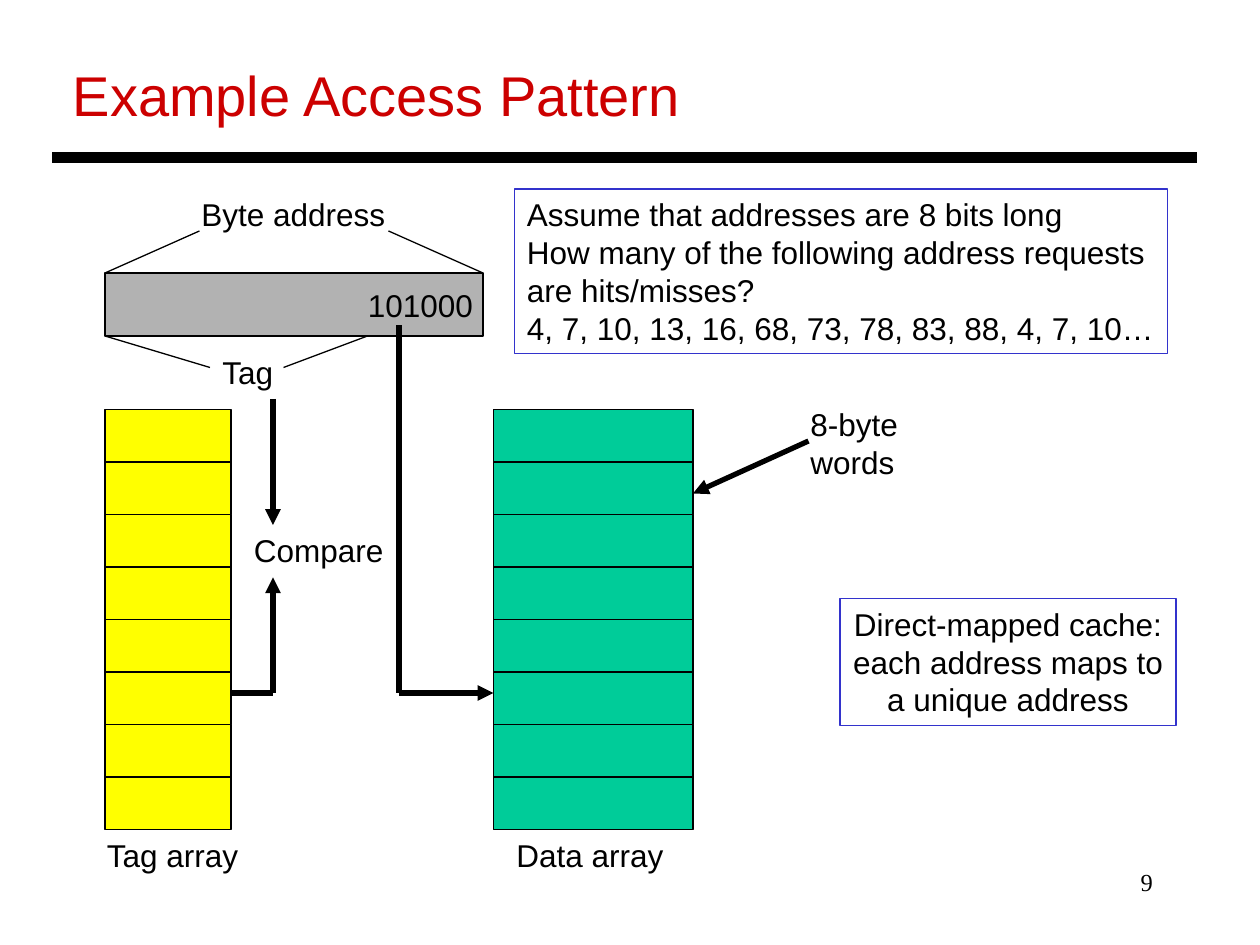
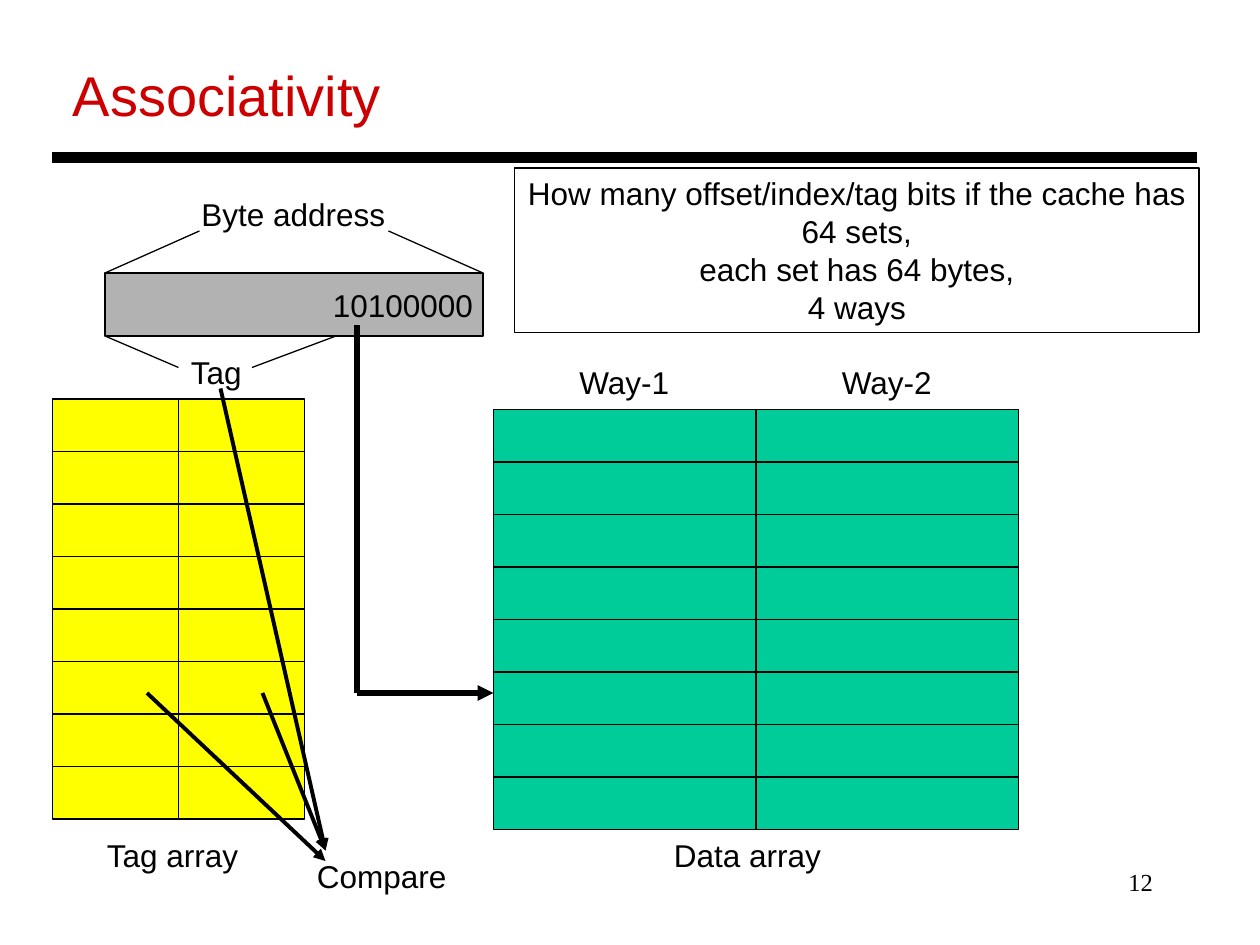
from dataclasses import dataclass
from typing import Optional

from lxml.etree import SubElement
from pptx import Presentation
from pptx.dml.color import RGBColor
from pptx.enum.shapes import MSO_CONNECTOR as Connector, MSO_SHAPE as Preset
from pptx.enum.text import MSO_ANCHOR as Anchor, MSO_AUTO_SIZE as AutoSize, PP_ALIGN as Align
from pptx.oxml.ns import qn
from pptx.slide import Slide
from pptx.util import Inches, Pt

COLUMNS, ROWS = 120, 90
SLIDE_WIDTH, SLIDE_HEIGHT = Inches(10), Inches(7.5)


@dataclass(frozen=True)
class Theme:
    ink: str = "000000"
    title: str = "CC0000"
    data: str = "00CC99"
    tag: str = "FFFF00"
    address: str = "B2B2B2"
    note: str = "3333CC"
    font: str = "Arial"
    number_font: str = "Times New Roman"
    title_size: float = 32
    body_size: float = 18
    number_size: float = 14
    thin: float = 0.75
    medium: float = 2.25
    thick: float = 3
    rule: float = 6


THEME = Theme()


@dataclass(frozen=True)
class Area:
    column: float
    row: float
    columns: float
    rows: float


@dataclass(frozen=True)
class Text:
    area: Area
    lines: tuple[str, ...]
    align: Align = Align.LEFT
    size: float = THEME.body_size
    color: str = THEME.ink
    font: str = THEME.font
    wrap: bool = False
    border: Optional[str] = None


@dataclass(frozen=True)
class Line:
    start: tuple[float, float]
    end: tuple[float, float]
    width: float = THEME.thick
    arrow: bool = False


@dataclass(frozen=True)
class CellArray:
    column: float
    row: float
    cell_columns: float
    fill: str
    ways: int = 1
    sets: int = 8
    cell_rows: float = 5


@dataclass(frozen=True)
class Address:
    bits: str
    tag_column: float
    tag_end: float
    index_column: float


def x(columns: float) -> int:
    return round(SLIDE_WIDTH * columns / COLUMNS)


def y(rows: float) -> int:
    return round(SLIDE_HEIGHT * rows / ROWS)


def place(area: Area) -> tuple[int, int, int, int]:
    return x(area.column), y(area.row), x(area.columns), y(area.rows)


def label(column: float, row: float, columns: float, words: str) -> Text:
    return Text(Area(column, row, columns, 4.8), (words,))


def write(frame, text: Text) -> None:
    frame.word_wrap = text.wrap
    for number, words in enumerate(text.lines):
        paragraph = frame.paragraphs[0] if number == 0 else frame.add_paragraph()
        paragraph.alignment = text.align
        run = paragraph.add_run()
        run.text = words
        run.font.name = text.font
        run.font.size = Pt(text.size)
        run.font.color.rgb = RGBColor.from_string(text.color)


def draw_text(slide: Slide, text: Text) -> None:
    box = slide.shapes.add_textbox(*place(text.area))
    if text.border:
        box.line.color.rgb = RGBColor.from_string(text.border)
        box.line.width = Pt(THEME.thin)
    write(box.text_frame, text)
    box.text_frame.auto_size = AutoSize.NONE if text.wrap else AutoSize.SHAPE_TO_FIT_TEXT


def draw_rectangle(slide: Slide, area: Area, fill: str):
    shape = slide.shapes.add_shape(Preset.RECTANGLE, *place(area))
    shape.shadow.inherit = False
    shape.fill.solid()
    shape.fill.fore_color.rgb = RGBColor.from_string(fill)
    shape.line.color.rgb = RGBColor.from_string(THEME.ink)
    shape.line.width = Pt(THEME.thin)
    return shape


def draw_line(slide: Slide, line: Line) -> None:
    (start_column, start_row), (end_column, end_row) = line.start, line.end
    connector = slide.shapes.add_connector(
        Connector.STRAIGHT, x(start_column), y(start_row), x(end_column), y(end_row))
    connector.line.color.rgb = RGBColor.from_string(THEME.ink)
    connector.line.width = Pt(line.width)
    if line.arrow:
        SubElement(connector.line._get_or_add_ln(), qn("a:tailEnd"), type="triangle")
    SubElement(connector._element.spPr, qn("a:effectLst"))


def draw_array(slide: Slide, array: CellArray) -> None:
    for way in range(array.ways):
        for entry in range(array.sets):
            draw_rectangle(slide, Area(array.column + way * array.cell_columns,
                                       array.row + entry * array.cell_rows,
                                       array.cell_columns, array.cell_rows), array.fill)


def draw_address(slide: Slide, address: Address) -> None:
    bar = Area(10, 26, 36, 6)
    right, bottom = bar.column + bar.columns, bar.row + bar.rows
    frame = draw_rectangle(slide, bar, THEME.address).text_frame
    frame.vertical_anchor = Anchor.MIDDLE
    frame.margin_right = Inches(0.08)
    write(frame, Text(bar, (address.bits,), Align.RIGHT, wrap=True))
    draw_text(slide, label(18, 18, 20, "Byte address"))
    draw_text(slide, label(address.tag_column, 33, 7.5, "Tag"))
    index = address.index_column
    for line in (
        Line((19, 22), (bar.column, bar.row), THEME.thin),
        Line((37, 22), (right, bar.row), THEME.thin),
        Line((bar.column, bottom), (address.tag_column, 35), THEME.thin),
        Line((address.tag_column + 7, 35), (address.tag_end, bottom), THEME.thin),
        Line((index, 31), (index, 66)),
        Line((index, 66), (47, 66), arrow=True),
    ):
        draw_line(slide, line)


@dataclass(frozen=True)
class Page:
    title: str
    title_columns: float
    number: str
    arrays: tuple[CellArray, ...]
    address: Address
    texts: tuple[Text, ...]
    lines: tuple[Line, ...]


PAGES = (
    Page(
        "Example Access Pattern", 60.5, "9",
        (CellArray(47, 39, 19, THEME.data), CellArray(10, 39, 12, THEME.tag)),
        Address("101000", 20, 35, 38),
        (
            label(76, 38, 19.5, "8-byte words"),
            label(23, 50, 14.75, "Compare"),
            label(48, 79, 16.5, "Data array"),
            Text(Area(80, 57, 32, 12.1),
                 ("Direct-mapped cache:", "each address maps to", "a unique address"),
                 Align.CENTER, border=THEME.note),
            Text(Area(49, 18, 62.2, 15.7),
                 ("Assume that addresses are 8 bits long",
                  "How many of the following address requests",
                  "are hits/misses?",
                  "4, 7, 10, 13, 16, 68, 73, 78, 83, 88, 4, 7, 10…"),
                 border=THEME.note),
        ),
        (
            Line((77, 42), (66, 47), arrow=True),
            Line((22, 66), (26, 66)),
            Line((26, 38), (26, 50), arrow=True),
            Line((26, 66), (26, 55), arrow=True),
        ),
    ),
    Page(
        "Associativity", 31.8, "12",
        (CellArray(47, 39, 25, THEME.data, ways=2), CellArray(5, 38, 12, THEME.tag, ways=2)),
        Address("10100000", 17, 32, 34),
        (
            label(54, 34, 11, "Way-1"),
            label(79, 34, 11, "Way-2"),
            label(29, 81, 14.75, "Compare"),
            label(63, 79, 16.5, "Data array"),
            Text(Area(49, 16, 65.2, 15.7),
                 ("How many offset/index/tag bits if the cache has", "64 sets,",
                  "each set has 64 bytes,", "4 ways"),
                 Align.CENTER, border=THEME.ink),
        ),
        (
            Line((14, 66), (31, 82), THEME.medium, True),
            Line((25, 66), (31, 81), THEME.medium, True),
            Line((21, 37), (31, 81), THEME.medium, True),
        ),
    ),
)


def draw_page(slide: Slide, page: Page) -> None:
    draw_text(slide, Text(Area(86, 82, 25, 6), (page.number,), Align.RIGHT,
                          THEME.number_size, font=THEME.number_font, wrap=True))
    draw_text(slide, Text(Area(5.75, 5.15, page.title_columns, 7.6), (page.title,),
                          size=THEME.title_size, color=THEME.title))
    draw_line(slide, Line((5, 15), (114, 15), THEME.rule))
    for array in page.arrays:
        draw_array(slide, array)
    draw_address(slide, page.address)
    for text in (*page.texts, label(9, 79, 15.25, "Tag array")):
        draw_text(slide, text)
    for line in page.lines:
        draw_line(slide, line)


def main() -> None:
    presentation = Presentation()
    presentation.slide_width, presentation.slide_height = SLIDE_WIDTH, SLIDE_HEIGHT
    for page in PAGES:
        draw_page(presentation.slides.add_slide(presentation.slide_layouts[6]), page)
    presentation.save("out.pptx")


if __name__ == "__main__":
    main()
